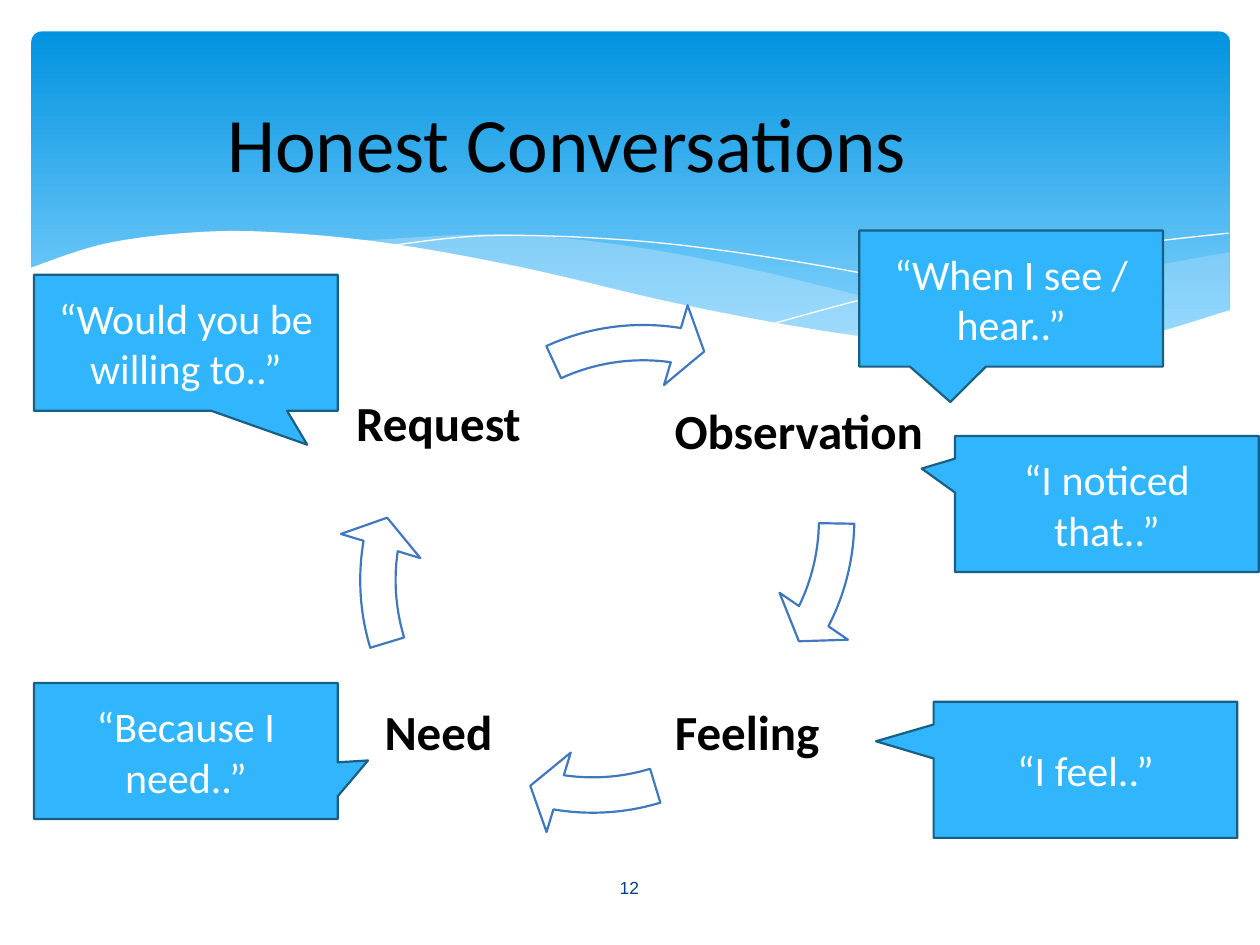
"""Build the Honest Conversations slide: a wave banner, a four-step cycle and speech callouts."""
from lxml import etree
from pptx import Presentation
from pptx.dml.color import RGBColor
from pptx.enum.shapes import MSO_SHAPE
from pptx.enum.text import MSO_ANCHOR, PP_ALIGN
from pptx.oxml.ns import qn
from pptx.util import Inches, Pt

ROUNDED = MSO_SHAPE.ROUNDED_RECTANGLE
ARROW = MSO_SHAPE.CIRCULAR_ARROW
CALLOUT = MSO_SHAPE.RECTANGULAR_CALLOUT
MIDDLE = MSO_ANCHOR.MIDDLE
CENTER = PP_ALIGN.CENTER
TITLE_ONLY = 5

BLACK, WHITE, NAVY = "000000", "FFFFFF", "073E87"
BANNER_TOP, BANNER_BOTTOM, MIST = "0293E0", "83D3FE", "C6E7FC"
ARROW_EDGE, CALLOUT_FILL, CALLOUT_EDGE = "3F78BF", "31B6FD", "195F84"

TITLE_FONT = {"name": "Calibri", "size": Pt(44)}
STEP_FONT = {"name": "Calibri", "size": Pt(28), "bold": True}
CALLOUT_FONT = {"name": "Calibri", "size": Pt(24)}
NUMBER_FONT = {"name": "Arial", "size": Pt(10)}
STEP_MARGINS = dict.fromkeys(
    ("margin_left", "margin_right", "margin_top", "margin_bottom"), Inches(0.04))

deck = Presentation()
deck.slide_width, deck.slide_height = Inches(10), Inches(7.5)
CELL = deck.slide_width / 100
page = deck.slides.add_slide(deck.slide_layouts[TITLE_ONLY])
shapes = page.shapes
rgb = RGBColor.from_string


def area(*cells):
    """Turn columns and rows of the grid into slide lengths."""
    return [round(cell * CELL) for cell in cells]


def paint(shape, fill=None, line=None, width=1.25, opacity=100):
    """Set the fill, outline and opacity of a shape."""
    shape.shadow.inherit = False
    for part, color in ((shape.fill, fill), (shape.line.fill, line)):
        if color:
            part.solid()
            part.fore_color.rgb = rgb(color)
        else:
            part.background()
    if line:
        shape.line.width = Pt(width)
    if opacity < 100:
        color = shape._element.spPr.find(qn("a:solidFill"))[0]
        etree.SubElement(color, qn("a:alpha")).set("val", str(opacity * 1000))


banner = shapes.add_shape(ROUNDED, *area(2.5, 2.5, 95.1, 27))
paint(banner)
banner.adjustments[0] = 0.03
banner.fill.gradient()
banner.fill.gradient_angle = 270
for stop, position, color in zip(banner.fill.gradient_stops, (0, 0.9), (BANNER_TOP, BANNER_BOTTOM)):
    stop.position = position
    stop.color.rgb = rgb(color)

right_crest = [(97.6, 20), (89.1, 21.6), (80.5, 23.7), (73, 25.25), (66.1, 26.5)]
right_trough = [(66.1, 26.5), (74.5, 27.5), (82, 27.8), (90, 27), (97.6, 24.7)]
middle_crest = [(89.3, 27.3), (80.7, 26), (70.6, 24), (59.8, 21.4), (50, 19.55),
                (39.9, 18.6), (28.6, 19.1)]
middle_trough = [(28.6, 19.1), (40.4, 21.1), (53, 24), (63.4, 26.1), (74.8, 27.6),
                 (82, 27.9), (89.3, 27.3)]
falling_line = [(30.9, 19.5), (38.7, 18.7), (48.9, 19), (58.2, 20), (69.5, 21.9),
                (80, 24.3), (90.7, 27.2)]
rising_line = [(61.3, 25.7), (69.5, 23.5), (80.6, 21), (89, 19.5), (97.5, 18.5)]
front_crest = [(97.7, 24.6), (88.7, 27.1), (79.4, 27.7), (70.8, 27), (62.6, 25.8),
               (52.9, 23.9), (41.8, 21.3), (31.5, 19.4), (23, 18.5), (16.1, 18.4),
               (8.5, 19.3), (2.3, 21.3)]
front_base = [(2.3, 32.9), (97.7, 32.9)]

CURVE_STEPS = 10
waves = (
    ([right_crest, right_trough], {"fill": MIST, "opacity": 29}),
    ([middle_crest, middle_trough], {"fill": MIST, "opacity": 40}),
    ([falling_line], {"line": WHITE, "width": 0}),
    ([rising_line], {"line": WHITE, "width": 0}),
    ([front_crest, front_base], {"fill": WHITE}))
for edges, look in waves:
    points = []
    for knots in edges:
        padded = [knots[0], *knots, knots[-1]]
        for before, start, end, after in zip(padded, padded[1:], padded[2:], padded[3:]):
            for step in range(CURVE_STEPS):
                t = step / CURVE_STEPS
                points.append(area(*(
                    b + t * (c - a) / 2 + t**2 * (2 * a - 5 * b + 4 * c - d) / 2
                    + t**3 * (3 * b - a - 3 * c + d) / 2
                    for a, b, c, d in zip(before, start, end, after))))
        points.append(area(*knots[-1]))
    outline = shapes.build_freeform(*points[0])
    outline.add_line_segments(points[1:], close="fill" in look)
    paint(outline.convert_to_shape(), **look)

texts = []
LABEL_HEIGHT, RING = 14.4, 40.7
LEFT_COLUMN, RIGHT_COLUMN, UPPER_ROW, LOWER_ROW = 27.6, 52.1, 26.6, 51.1
SHAFT, HEAD_DEGREES, HEAD_WIDTH = 0.069, 7.76, 0.081
DEGREE = 0.6
steps = (
    ("Observation", (48, 27.2, 30.8), (29, 20.9), 0, 1, 26.69),
    ("Feeling", (RIGHT_COLUMN, LOWER_ROW, 14.4), (26.7, 25.7), 0, 73.1, 99.14),
    ("Need", (LEFT_COLUMN, LOWER_ROW, 14.4), (26.7, 25.7), 0, 163.1, 189.14),
    ("Request", (LEFT_COLUMN, UPPER_ROW, 14.4), (30.7, 23.9), 6.9, 238.49, 271.84))
for name, label_place, ring_corner, turn, start, end in steps:
    label = shapes.add_textbox(*area(*label_place, LABEL_HEIGHT))
    texts.append((label, name, BLACK, STEP_FONT, STEP_MARGINS, 0.9))
    arrow = shapes.add_shape(ARROW, *area(*ring_corner, RING, RING))
    arrow.rotation = turn
    angles = [degrees * DEGREE for degrees in (HEAD_DEGREES, end, start)]
    for index, value in enumerate((SHAFT, *angles, HEAD_WIDTH)):
        arrow.adjustments[index] = value
    paint(arrow, WHITE, ARROW_EDGE)

title = shapes.title
title.left, title.top, title.width, title.height = area(0, 4.4, 90, 13.7)
shapes._spTree.append(title._element)
texts.append((title, "Honest Conversations", BLACK, TITLE_FONT, {}, 1))

number = shapes.add_textbox(*area(43.6, 68.4, 12.7, 4))
texts.append((number, "12", NAVY, NUMBER_FONT, {}, 1))

CALLOUT_SIZE = (24.1, 10.8)
callouts = (
    ("“When I see / hear..”", (68.2, 18.3), (-0.2, 0.76)),
    ("“I noticed that..”", (75.8, 34.6), (-0.61, -0.26)),
    ("“I feel..”", (74.1, 55.7), (-0.69, -0.21)),
    ("“Because I need..”", (2.7, 54.2), (0.6, 0.07)),
    ("“Would you be willing to..”", (2.7, 21.8), (0.4, 0.75)))
for words, corner, tip in callouts:
    callout = shapes.add_shape(CALLOUT, *area(*corner, *CALLOUT_SIZE))
    callout.adjustments[0], callout.adjustments[1] = tip
    paint(callout, CALLOUT_FILL, CALLOUT_EDGE)
    texts.append((callout, words, WHITE, CALLOUT_FONT, {}, 1))

for box, words, color, font, margins, spacing in texts:
    frame = box.text_frame
    para = frame.paragraphs[0]
    span = para.add_run()
    span.text = words
    span.font.color.rgb = rgb(color)
    for target, values in (
            (frame, {"word_wrap": True, "vertical_anchor": MIDDLE, **margins}),
            (para, {"alignment": CENTER, "line_spacing": spacing}),
            (span.font, font)):
        for attribute, value in values.items():
            setattr(target, attribute, value)

deck.save("out.pptx")
